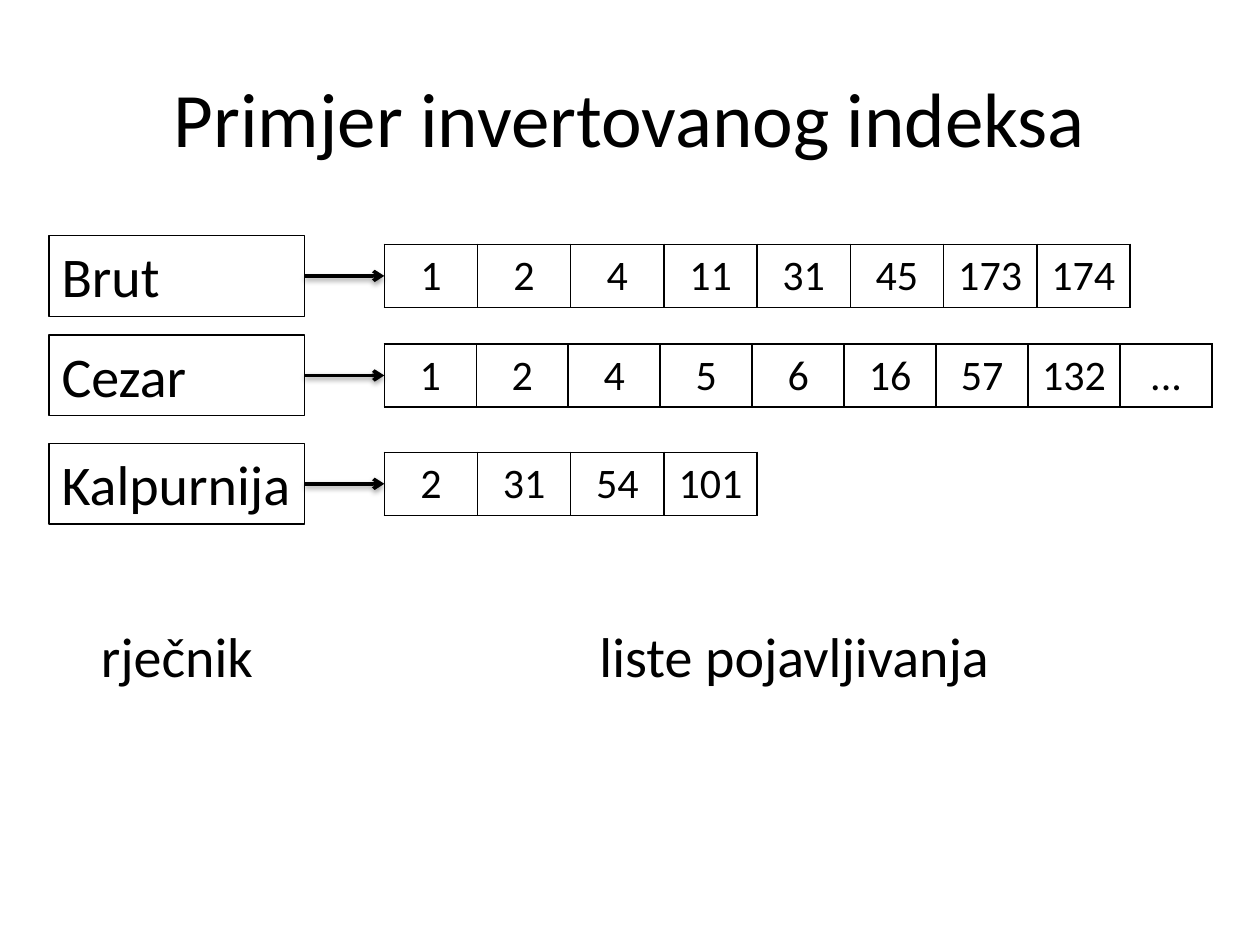
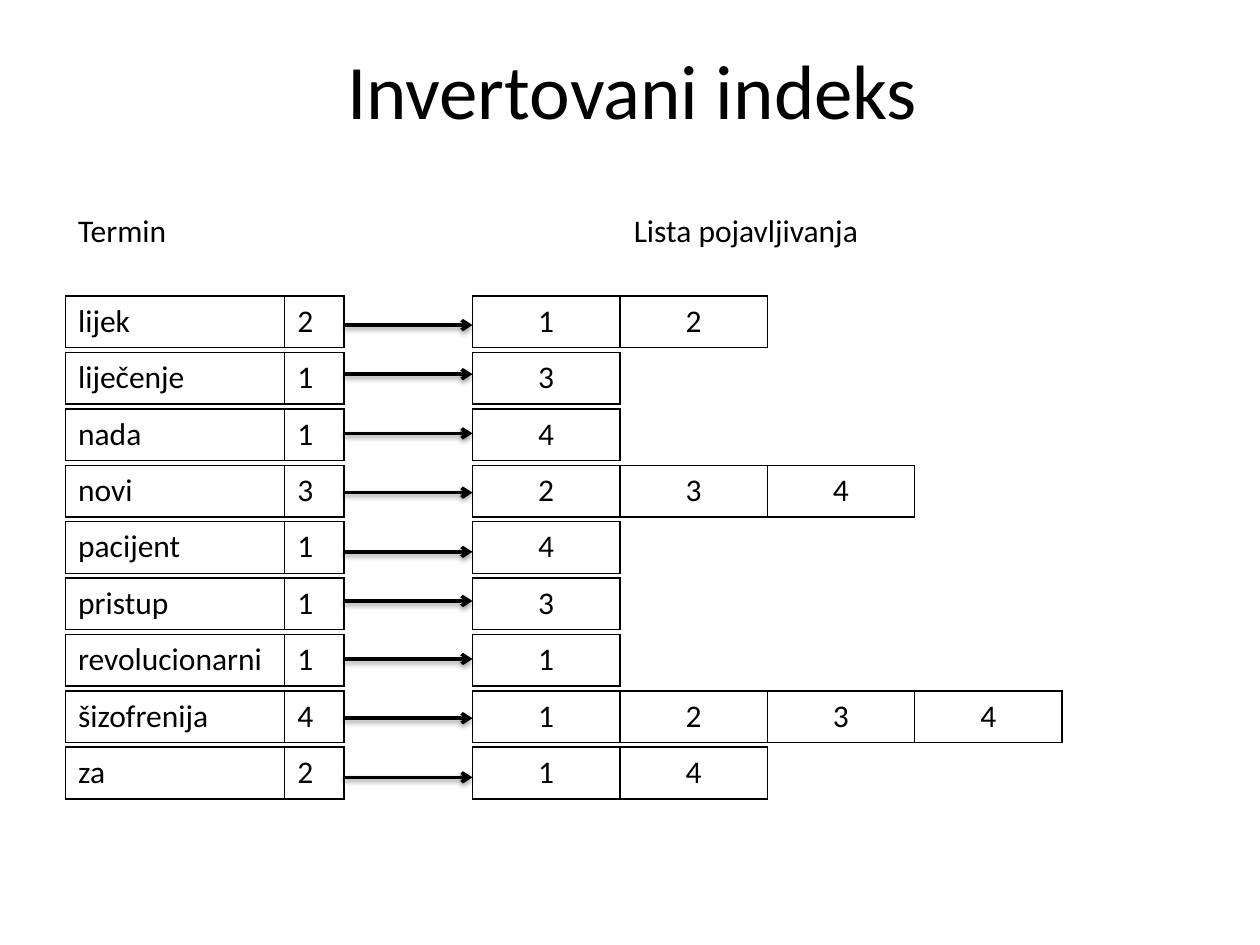
from lxml import etree
from pptx import Presentation
from pptx.dml.color import RGBColor
from pptx.enum.shapes import MSO_CONNECTOR as Connector, MSO_SHAPE as Shape
from pptx.enum.text import MSO_ANCHOR as Anchor, MSO_AUTO_SIZE as AutoSize, PP_ALIGN as Align
from pptx.oxml import parse_xml
from pptx.oxml.ns import nsdecls, qn
from pptx.util import Inches, Pt

# Content: slide 1, (term, top of its box, width of a posting cell, postings)
EXAMPLE_TITLE = "Primjer invertovanog indeksa"
EXAMPLE_ROWS = [
    ("Brut", 1.87, 0.74, ["1", "2", "4", "11", "31", "45", "173", "174"]),
    ("Cezar", 2.66, 0.73, ["1", "2", "4", "5", "6", "16", "57", "132", "..."]),
    ("Kalpurnija", 3.52, 0.74, ["2", "31", "54", "101"]),
]
EXAMPLE_LABELS = [  # text, left, width, alignment, wrap
    ("rječnik", 0.39, 2.03, Align.CENTER, True),
    ("liste pojavljivanja", 4.66, 3.33, Align.LEFT, False),
]

# Content: slide 2, (term, postings, height of its arrow)
INDEX_TITLE = "Invertovani indeks"
INDEX_HEADINGS = ["Termin", "Lista pojavljivanja"]
INDEX_ROWS = [
    ("lijek", ["1", "2"], 2.58),
    ("liječenje", ["3"], 2.97),
    ("nada", ["4"], 3.44),
    ("novi", ["2", "3", "4"], 3.91),
    ("pacijent", ["4"], 4.38),
    ("pristup", ["3"], 4.77),
    ("revolucionarni", ["1"], 5.23),
    ("šizofrenija", ["1", "2", "3", "4"], 5.7),
    ("za", ["1", "4"], 6.17),
]

# Shared look
COLORS = {"ink": "000000", "paper": "FFFFFF"}
FONT = "Calibri"
INK = RGBColor.from_string(COLORS["ink"])
PLAIN_TABLE_STYLE = "{2D5ABB26-0587-4C30-8999-92F81FD0307C}"


def write(frame, text, size, align=Align.LEFT):
    para = frame.paragraphs[0]
    para.alignment = align
    span = para.add_run()
    span.text = text
    span.font.size = Pt(size)
    span.font.name = FONT
    span.font.color.rgb = INK


def add_page(deck, title, left, top):
    page = deck.slides.add_slide(deck.slide_layouts[5])
    page.background.fill.solid()
    page.background.fill.fore_color.rgb = RGBColor.from_string(COLORS["paper"])
    box = page.shapes.title
    box.left, box.top, box.width, box.height = map(Inches, (left, top, 9, 1.25))
    box.text_frame.vertical_anchor = Anchor.MIDDLE
    write(box.text_frame, title, 44, Align.CENTER)
    return page


def border_cell(cell):
    properties = cell._tc.get_or_add_tcPr()
    for position, side in enumerate(("lnL", "lnR", "lnT", "lnB")):
        properties.insert(position, parse_xml(
            f'<a:{side} {nsdecls("a")} w="{Pt(1)}"><a:solidFill>'
            f'<a:srgbClr val="{COLORS["ink"]}"/></a:solidFill></a:{side}>'))


def add_row_table(page, left, top, widths, height, texts, size, aligns, bordered=True):
    """Add a one-row table; columns beyond the texts join the last one."""
    holder = page.shapes.add_table(1, len(widths), Inches(left), Inches(top),
                                   Inches(sum(widths)), Inches(height))
    for style in holder.element.iter(qn("a:tableStyleId")):
        style.text = PLAIN_TABLE_STYLE
    table = holder.table
    table.first_row = table.horz_banding = False
    table.rows[0].height = Inches(height)
    for column, width in enumerate(widths):
        table.columns[column].width = Inches(width)
        table.cell(0, column).fill.background()
        if bordered:
            border_cell(table.cell(0, column))
    if len(widths) > len(texts):
        table.cell(0, len(texts) - 1).merge(table.cell(0, len(widths) - 1))
    for column, (text, align) in enumerate(zip(texts, aligns)):
        write(table.cell(0, column).text_frame, text, size, align)


def add_postings(page, left, top, width, height, postings, size):
    count = len(postings)
    add_row_table(page, left, top, [width] * count, height, postings, size,
                  [Align.CENTER] * count)


def add_arrow(page, start, end, y, source=None):
    arrow = page.shapes.add_connector(Connector.STRAIGHT, Inches(start), Inches(y),
                                      Inches(end), Inches(y))
    if source is not None:
        arrow.begin_connect(source, 3)
    arrow.line.color.rgb = INK
    arrow.line.width = Pt(2)
    etree.SubElement(arrow.line._get_or_add_ln(), qn("a:tailEnd"), type="arrow")
    # Soft shadow straight below the line
    arrow.element.spPr.append(parse_xml(
        f'<a:effectLst {nsdecls("a")}><a:outerShdw blurRad="{Pt(3.1)}" '
        f'dist="{Pt(1.6)}" dir="5400000" rotWithShape="0">'
        f'<a:srgbClr val="{COLORS["ink"]}"><a:alpha val="38000"/></a:srgbClr>'
        '</a:outerShdw></a:effectLst>'))


def add_term_box(page, term, left, top, width, height):
    box = page.shapes.add_shape(Shape.RECTANGLE, Inches(left), Inches(top),
                                Inches(width), Inches(height))
    box.shadow.inherit = False
    box.fill.background()
    box.line.color.rgb = INK
    box.line.width = Pt(0.75)
    box.text_frame.vertical_anchor = Anchor.TOP
    box.text_frame.auto_size = AutoSize.SHAPE_TO_FIT_TEXT
    write(box.text_frame, term, 32)
    return box


def build_example(deck):
    page = add_page(deck, EXAMPLE_TITLE, 0.5, 0.3)
    left, width, height, list_left = 0.39, 2.03, 0.64, 3.05
    for term, top, cell_width, postings in EXAMPLE_ROWS:
        box = add_term_box(page, term, left, top, width, height)
        add_postings(page, list_left, top + 0.07, cell_width, 0.5, postings, 24)
        add_arrow(page, left + width, list_left, top + height / 2, box)
    # Captions under the two columns
    for text, label_left, label_width, align, wrap in EXAMPLE_LABELS:
        label = page.shapes.add_textbox(Inches(label_left), Inches(4.88),
                                        Inches(label_width), Inches(height))
        label.text_frame.word_wrap = wrap
        label.text_frame.auto_size = AutoSize.SHAPE_TO_FIT_TEXT
        write(label.text_frame, text, 32, align)


def build_index(deck):
    page = add_page(deck, INDEX_TITLE, 0.52, 0.08)
    left, list_left, height, first_top, last_top = 0.52, 3.75, 0.41, 2.35, 5.93
    term_widths = [1.74, 0.47]
    pitch = (last_top - first_top) / (len(INDEX_ROWS) - 1)
    add_row_table(page, left, 1.64, [1.8] * 5, height, INDEX_HEADINGS, 18,
                  [Align.LEFT, Align.CENTER], bordered=False)
    for number, (term, postings, arrow_y) in enumerate(INDEX_ROWS):
        top = first_top + number * pitch
        # The second cell counts the postings of the term
        add_row_table(page, left, top, term_widths, height,
                      [term, str(len(postings))], 18, [Align.LEFT] * 2)
        add_postings(page, list_left, top, 1.17, height, postings, 18)
        add_arrow(page, left + sum(term_widths), list_left, arrow_y)


def main():
    deck = Presentation()
    deck.slide_width, deck.slide_height = Inches(10), Inches(7.5)
    build_example(deck)
    build_index(deck)
    deck.save("out.pptx")


if __name__ == "__main__":
    main()
